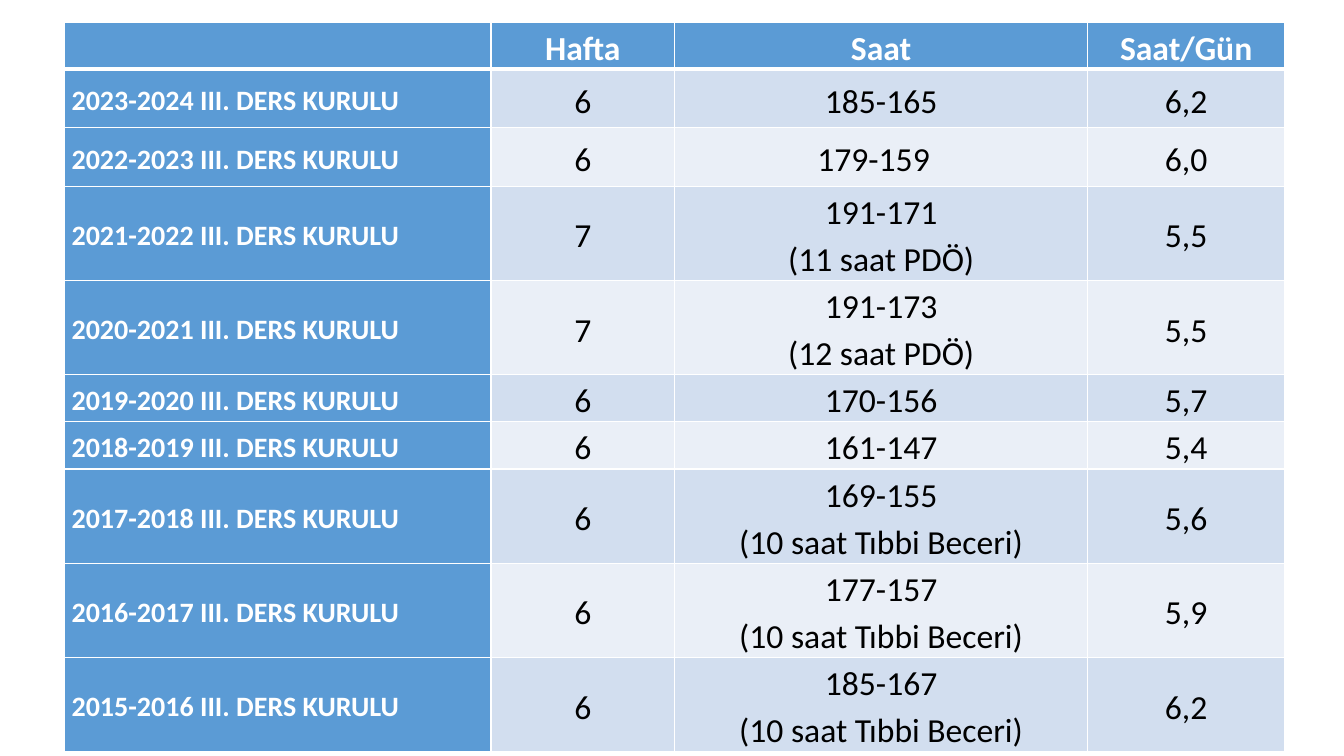
from lxml import etree
from pptx import Presentation
from pptx.dml.color import RGBColor
from pptx.enum.text import MSO_ANCHOR, PP_ALIGN
from pptx.oxml.ns import qn
from pptx.util import Pt

LEFT, CENTER = PP_ALIGN.LEFT, PP_ALIGN.CENTER
TOP, MIDDLE = MSO_ANCHOR.TOP, MSO_ANCHOR.MIDDLE

PX = 9144  # EMU per px, 100 px to the inch
WHITE = RGBColor(0xFF, 0xFF, 0xFF)
BLACK = RGBColor(0x00, 0x00, 0x00)
HEADING_BLUE = RGBColor(0x5B, 0x9B, 0xD5)
BANDS = (RGBColor(0xD2, 0xDE, 0xEF), RGBColor(0xEA, 0xEF, 0xF7))
FONT = "Calibri"
INSET = 7
THIN, THICK = 1, 3

HEADINGS = ("", "Hafta", "Saat", "Saat/Gün")
COMMITTEES = (
    ("2023-2024", "6", "185-165", "6,2"),
    ("2022-2023", "6", "179-159", "6,0"),
    ("2021-2022", "7", "191-171\n(11 saat PDÖ)", "5,5"),
    ("2020-2021", "7", "191-173\n(12 saat PDÖ)", "5,5"),
    ("2019-2020", "6", "170-156", "5,7"),
    ("2018-2019", "6", "161-147", "5,4"),
    ("2017-2018", "6", "169-155\n(10 saat Tıbbi Beceri)", "5,6"),
    ("2016-2017", "6", "177-157\n(10 saat Tıbbi Beceri)", "5,9"),
    ("2015-2016", "6", "185-167\n(10 saat Tıbbi Beceri)", "6,2"),
)
TABLE_BOX = (64, 22, 1210, 714)
COLUMN_WIDTHS = (423, 182, 410, 195)
ROW_HEIGHTS = (43, 58, 58, 68, 68, 33, 33, 68, 68, 68)
HOURS_COLUMN = 2
FIRST_TOP_ANCHORED_ROW = 3
SHIFTED_CELL = (2, HOURS_COLUMN)  # its hours sit slightly left of centre
SHIFT_INSET = 15


def set_borders(cell, **widths):
    """Draw white lines on the cell sides, with widths in points."""
    properties = cell._tc.get_or_add_tcPr()
    for side in "LRTB":
        line = etree.SubElement(properties, qn(f"a:ln{side}"),
                                w=str(Pt(widths.get(side, THIN))))
        fill = etree.SubElement(line, qn("a:solidFill"))
        etree.SubElement(fill, qn("a:srgbClr"), val=str(WHITE))


def write_text(frame, text, size=24, color=BLACK, bold=False, align=CENTER):
    for index, words in enumerate(text.split("\n")):
        para = frame.add_paragraph() if index else frame.paragraphs[0]
        para.alignment = align
        para.line_spacing = 1.15
        span = para.add_run()
        span.text = words
        span.font.name = FONT
        span.font.size = Pt(size)
        span.font.bold = bold
        span.font.color.rgb = color


def format_cell(cell, row, column):
    """Set insets, anchor, borders and fill from the cell's place."""
    shift = SHIFT_INSET if (row, column) == SHIFTED_CELL else 0
    cell.margin_left = INSET * PX
    cell.margin_right = (INSET + shift) * PX
    cell.margin_top = cell.margin_bottom = 0
    top_anchored = column == HOURS_COLUMN and row >= FIRST_TOP_ANCHORED_ROW
    cell.vertical_anchor = TOP if top_anchored else MIDDLE
    set_borders(cell, T=THICK if row == 1 else THIN,
                B=THICK if row == 0 else THIN)
    cell.fill.solid()
    is_heading = row == 0 or column == 0
    cell.fill.fore_color.rgb = HEADING_BLUE if is_heading else BANDS[(row - 1) % 2]


def add_hours_table(page, box):
    frame = page.shapes.add_table(len(ROW_HEIGHTS), len(COLUMN_WIDTHS),
                                  *(length * PX for length in box))
    table = frame.table
    for column, width in zip(table.columns, COLUMN_WIDTHS):
        column.width = width * PX
    for row, height in zip(table.rows, ROW_HEIGHTS):
        row.height = height * PX

    # Column headings
    for column, heading in enumerate(HEADINGS):
        cell = table.cell(0, column)
        format_cell(cell, 0, column)
        if heading:
            write_text(cell.text_frame, heading, color=WHITE, bold=True)

    # One row for each school year
    for row, (year, *values) in enumerate(COMMITTEES, start=1):
        name = table.cell(row, 0)
        format_cell(name, row, 0)
        write_text(name.text_frame, f"{year} III. DERS KURULU", size=20,
                   color=WHITE, bold=True, align=LEFT)
        for column, value in enumerate(values, start=1):
            cell = table.cell(row, column)
            format_cell(cell, row, column)
            write_text(cell.text_frame, value)


def main():
    deck = Presentation()
    deck.slide_width, deck.slide_height = 1333 * PX, 750 * PX
    page = deck.slides.add_slide(deck.slide_layouts[6])
    add_hours_table(page, TABLE_BOX)
    deck.save("out.pptx")


if __name__ == "__main__":
    main()
